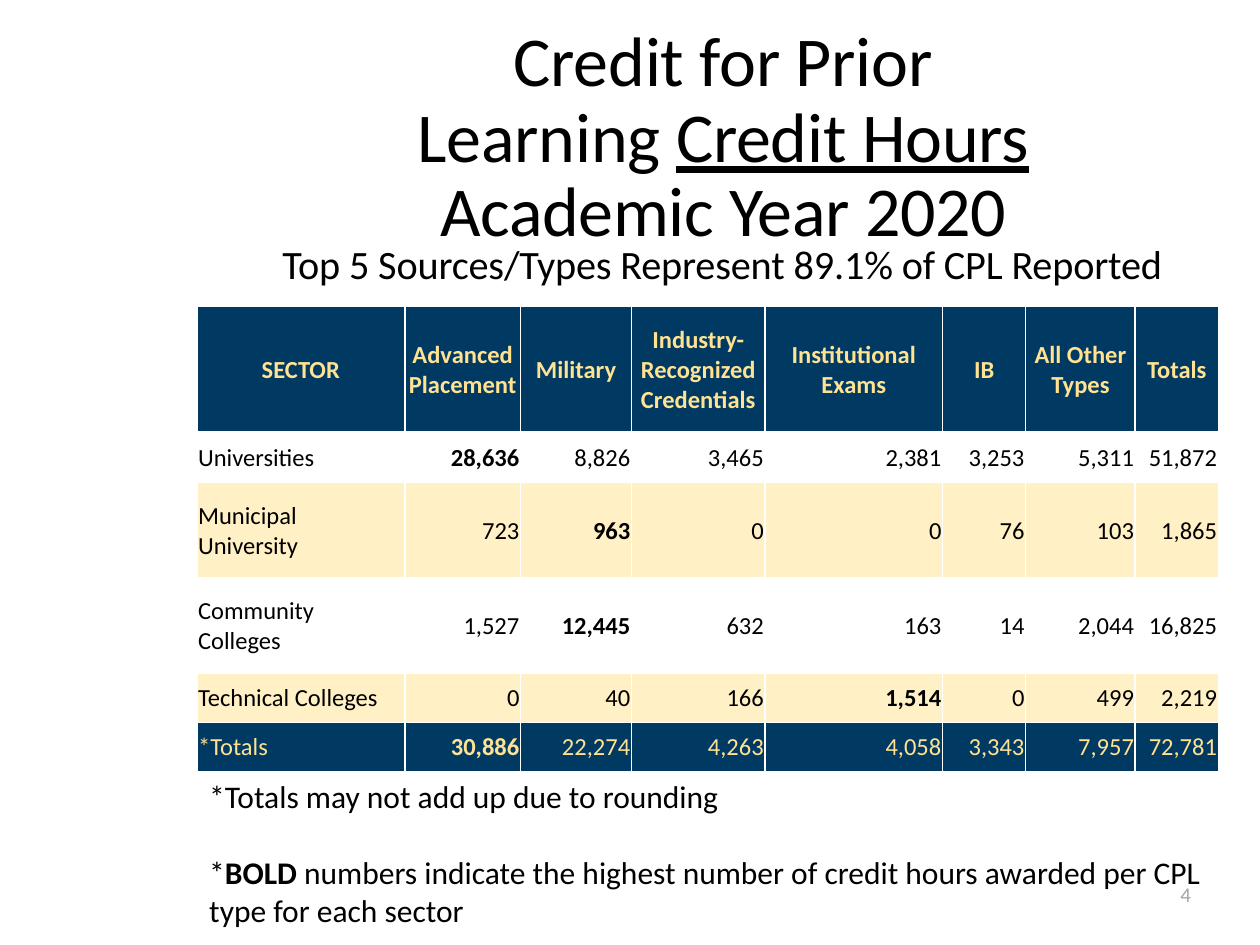
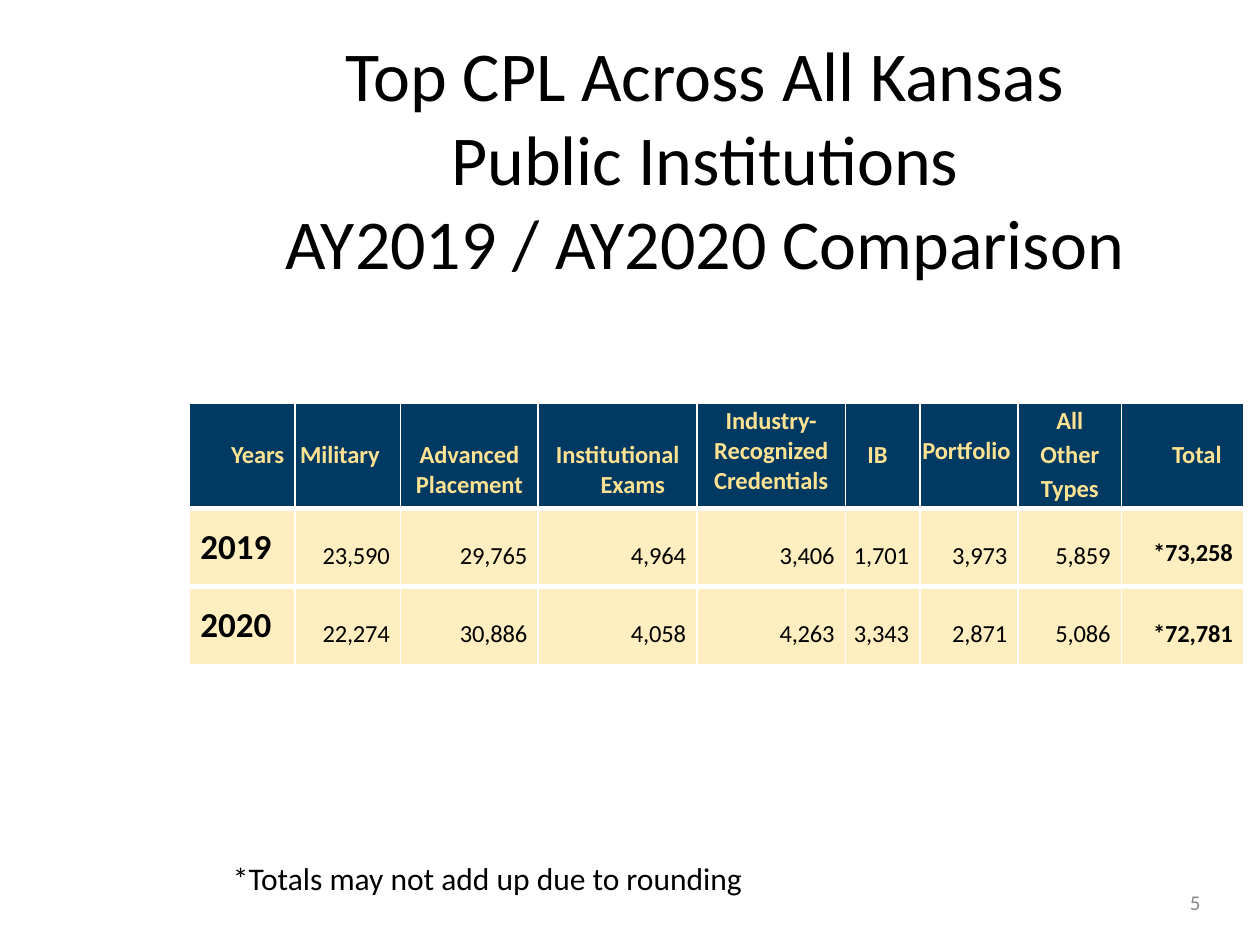
from lxml import etree
from pptx import Presentation
from pptx.dml.color import RGBColor
from pptx.enum.text import MSO_ANCHOR as Anchor, PP_ALIGN as Align
from pptx.oxml.ns import qn
from pptx.util import Pt

FONT = "Calibri"
NAVY, GOLD, BLACK, WHITE = "003A63", "FFE292", "000000", "FFFFFF"
CREAM, PALE_GOLD = "FFF0C5", "FFEEBF"
ROUNDING_NOTE = "*Totals may not add up due to rounding"

# Credit hours by sector
HOURS_SUBTITLE = "Top 5 Sources/Types Represent 89.1% of CPL Reported"
SECTOR_HEADS = ["SECTOR", "Advanced Placement", "Military",
                "Industry- Recognized Credentials", "Institutional Exams",
                "IB", "All Other Types", "Totals"]
SECTOR_ROWS = [
    ("Universities", 28636, 8826, 3465, 2381, 3253, 5311, 51872),
    ("Municipal\nUniversity", 723, 963, 0, 0, 76, 103, 1865),
    ("Community\nColleges", 1527, 12445, 632, 163, 14, 2044, 16825),
    ("Technical Colleges", 0, 40, 166, 1514, 0, 499, 2219),
    ("*Totals", 30886, 22274, 4263, 4058, 3343, 7957, 72781),
]
SECTOR_FILLS = [WHITE, CREAM, WHITE, CREAM, NAVY]
SECTOR_WIDTHS = [118.8, 66.2, 63.4, 76.3, 101.5, 47.5, 62.6, 47.5]
SECTOR_HEIGHTS = [72, 28.8, 54.5, 54.5, 28, 28]

# Comparison of years: heading, margins (left, top, right)
YEAR_HEADS = [
    ("Years", (18, 21.4, 0)),
    ("Military", (0, 21.4, 9)),
    ("Advanced Placement", (0, 21.4, 0)),
    ("Institutional Exams", (0, 21.4, 7)),
    ("Industry- Recognized Credentials", (0, 2.2, 0)),
    ("IB", (0, 21.4, 6)),
    ("Portfolio", (0, 19.3, 3)),
    ("All\nOther\nTypes", (0, 2.2, 0)),
    ("Total", (16.5, 21.4, 0)),
]
HANGING_HEAD = "Institutional Exams"
YEAR_ROWS = [
    ("2019", 23590, 29765, 4964, 3406, 1701, 3973, 5859, 73258),
    ("2020", 22274, 30886, 4058, 4263, 3343, 2871, 5086, 72781),
]
YEAR_WIDTHS = [60.5, 60.5, 78.5, 90.7, 85, 42.5, 56.2, 59, 69.8]
YEAR_HEIGHTS = [60.5, 44.6, 44.6]


def rgb(color):
    return RGBColor.from_string(color)


def add_run(p, text, size, color=BLACK, bold=False, underline=False, spacing=0):
    r = p.add_run()
    r.text = text
    r.font.name, r.font.size = FONT, Pt(size)
    r.font.bold, r.font.underline = bold, underline
    r.font.color.rgb = rgb(color)
    if spacing:
        r._r.get_or_add_rPr().set("spc", str(round(spacing * 100)))


def add_lines(p, lines, size, **style):
    """Add lines to one paragraph, with line breaks between them."""
    for i, line in enumerate(lines):
        if i:
            p.add_line_break()
        add_run(p, line, size, **style)


def add_box(slide, x, y, w, h, margins=(0, 0)):
    tf = slide.shapes.add_textbox(Pt(x), Pt(y), Pt(w), Pt(h)).text_frame
    tf.word_wrap = True
    tf.margin_left = tf.margin_right = Pt(margins[0])
    tf.margin_top = tf.margin_bottom = Pt(margins[1])
    return tf


def add_note(slide, x, y, w, h):
    tf = add_box(slide, x, y, w, h, (7.2, 3.6))
    add_run(tf.paragraphs[0], ROUNDING_NOTE, 18)
    return tf


def add_number(slide, number, x, y, color):
    tf = add_box(slide, x, y, 22.5, 14)
    add_run(tf.paragraphs[0], number, 12, color)


def add_grid(slide, x, y, widths, heights):
    shape = slide.shapes.add_table(len(heights), len(widths), Pt(x), Pt(y),
                                   Pt(sum(widths)), Pt(sum(heights)))
    table = shape.table
    table.first_row = table.horz_banding = False
    for column, width in zip(table.columns, widths):
        column.width = Pt(width)
    for row, height in zip(table.rows, heights):
        row.height = Pt(height)
    return table


def style_cell(cell, fill, margins, borders, anchor=Anchor.TOP):
    """Margins are left, top, right; borders are sides, top, bottom."""
    tcPr = cell._tc.get_or_add_tcPr()
    sides, top, bottom = borders
    for tag, width in (("lnL", sides), ("lnR", sides), ("lnT", top), ("lnB", bottom)):
        line = etree.SubElement(tcPr, qn(f"a:{tag}"), w=str(Pt(width)))
        solid = etree.SubElement(line, qn("a:solidFill"))
        etree.SubElement(solid, qn("a:srgbClr"), val=WHITE)
    cell.fill.solid()
    cell.fill.fore_color.rgb = rgb(fill)
    cell.margin_left, cell.margin_top, cell.margin_right = map(Pt, margins)
    cell.margin_bottom = 0
    cell.vertical_anchor = anchor
    return cell.text_frame.paragraphs[0]


def add_sector_table(slide):
    table = add_grid(slide, 112.5, 175, SECTOR_WIDTHS, SECTOR_HEIGHTS)
    rows = [SECTOR_HEADS, *SECTOR_ROWS]
    for i, (row, fill) in enumerate(zip(rows, [NAVY, *SECTOR_FILLS])):
        borders = (1, 1.5 if i == 1 else 1, 1.5 if i == 0 else 1)
        color = GOLD if fill == NAVY else BLACK
        for j, value in enumerate(row):
            p = style_cell(table.cell(i, j), fill, (0.7, 0.7, 0.7), borders,
                           Anchor.MIDDLE)
            if i == 0:
                p.alignment = Align.CENTER
                add_run(p, value, 14, color, bold=True)
            elif j == 0:
                add_lines(p, value.split("\n"), 14, color=color)
            else:
                p.alignment = Align.RIGHT
                highest = j < len(row) - 1 and value == max(row[1:-1])
                add_run(p, f"{value:,}", 14, color, bold=highest)


def add_year_table(slide):
    table = add_grid(slide, 108, 230.2, YEAR_WIDTHS, YEAR_HEIGHTS)
    for j, (head, margins) in enumerate(YEAR_HEADS):
        cell = table.cell(0, j)
        p = style_cell(cell, NAVY, margins, (1, 1, 3))
        for k, line in enumerate(head.split("\n")):
            if k:
                p = cell.text_frame.add_paragraph()
                p.space_before = Pt(2.2)
            p.alignment = Align.CENTER
            add_run(p, line, 14, GOLD, bold=True, spacing=-0.05)
        if head == HANGING_HEAD:
            pPr = p._p.get_or_add_pPr()
            pPr.set("marL", str(Pt(24.5)))
            pPr.set("indent", str(Pt(-17.3)))

    last = len(YEAR_HEADS) - 1
    for i, row in enumerate(YEAR_ROWS, 1):
        borders = (1, 3, 1 if i == len(YEAR_ROWS) else 3)
        for j, value in enumerate(row):
            cell = table.cell(i, j)
            if j == 0:
                p = style_cell(cell, PALE_GOLD, (6.5, 0, 0), borders, Anchor.MIDDLE)
                add_run(p, value, 20, bold=True)
                continue
            top = 17.1 if (i, j) == (1, last) else 18.5
            p = style_cell(cell, PALE_GOLD, (0, top, 6.2), borders)
            p.alignment = Align.RIGHT
            star = "*" if j == last else ""
            add_run(p, f"{star}{value:,}", 14, bold=j == last, spacing=-0.1)


def add_hours_slide(prs):
    slide = prs.slides.add_slide(prs.slide_layouts[6])
    tf = add_box(slide, 219.6, 14.4, 387.4, 129)
    p = tf.paragraphs[0]
    p.alignment, p.line_spacing = Align.CENTER, Pt(43.2)
    add_lines(p, ["Credit for Prior", "Learning "], 40, spacing=-0.1)
    add_run(p, "Credit Hours", 40, underline=True, spacing=-0.1)
    p = tf.add_paragraph()
    p.alignment, p.line_spacing = Align.CENTER, Pt(42.5)
    add_run(p, "Academic Year 2020", 40, spacing=-0.2)

    tf = add_box(slide, 161.3, 136.8, 505, 28)
    add_run(tf.paragraphs[0], HOURS_SUBTITLE, 23, spacing=-0.1)
    add_sector_table(slide)
    p = add_note(slide, 112.5, 440.6, 597.6, 94.3).add_paragraph()
    p.space_before = Pt(21.6)
    add_run(p, "*", 18)
    add_run(p, "BOLD", 18, bold=True)
    add_run(p, " numbers indicate the highest number of credit hours awarded"
               " per CPL type for each sector", 18)
    add_number(slide, "4", 674.6, 504, "A6A6A6")


def add_comparison_slide(prs):
    slide = prs.slides.add_slide(prs.slide_layouts[6])
    p = add_box(slide, 156.2, 18, 493.2, 145.4).paragraphs[0]
    p.alignment = Align.CENTER
    add_lines(p, ["Top CPL Across All Kansas Public Institutions",
                  "AY2019 / AY2020 Comparison"], 40)
    add_year_table(slide)
    add_note(slide, 126, 487.4, 433.4, 28.8)
    add_number(slide, "5", 680, 508.5, "8A8A8A")


def main():
    prs = Presentation()
    prs.slide_width, prs.slide_height = Pt(720), Pt(540)
    add_hours_slide(prs)
    add_comparison_slide(prs)
    prs.save("out.pptx")


if __name__ == "__main__":
    main()
